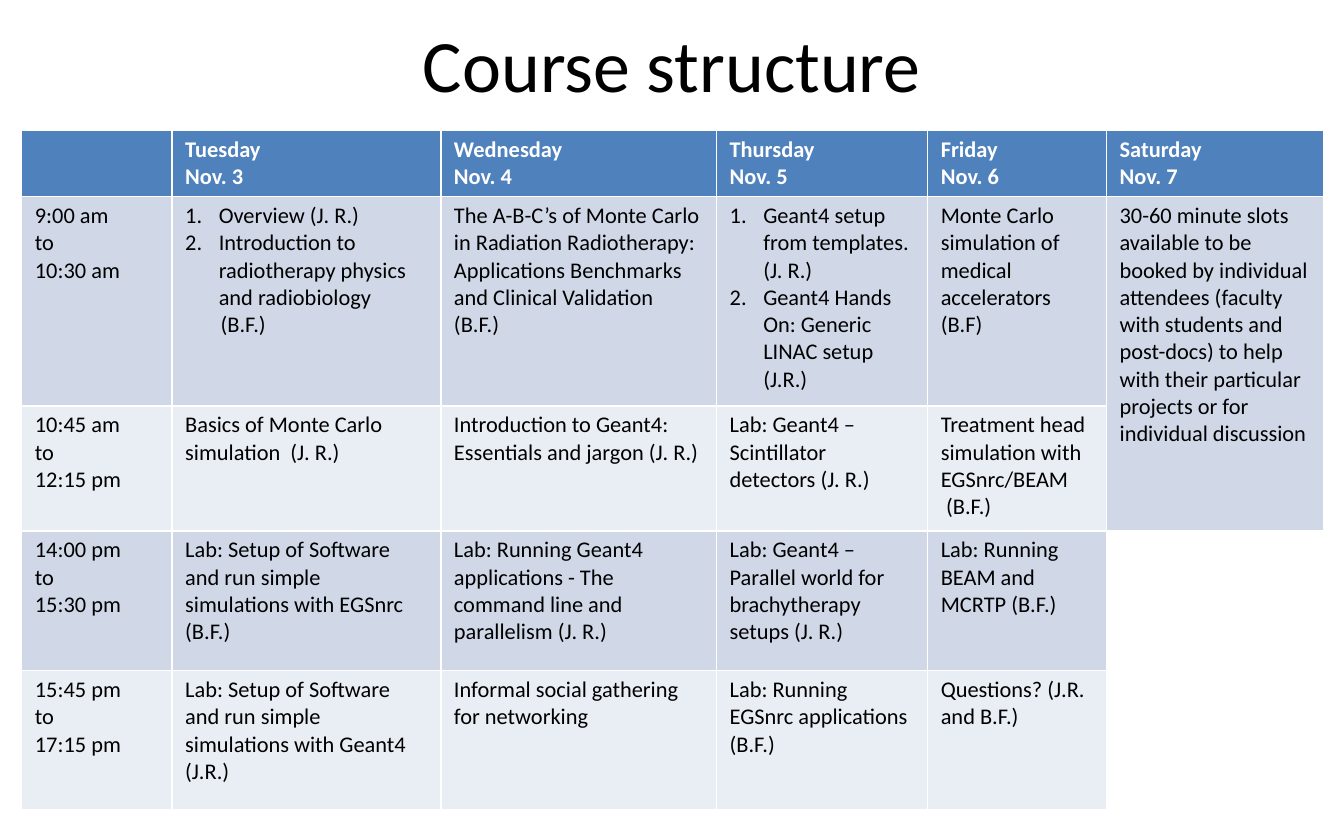
from dataclasses import dataclass, field
from typing import Any

from lxml.etree import SubElement
from pptx import Presentation
from pptx.dml.color import RGBColor
from pptx.enum.text import MSO_ANCHOR, PP_ALIGN
from pptx.oxml.ns import qn
from pptx.util import Cm, Pt


@dataclass(frozen=True)
class Theme:
    face: str = "Calibri"
    head: RGBColor = RGBColor(0x4F, 0x81, 0xBD)
    odd: RGBColor = RGBColor(0xD0, 0xD8, 0xE8)
    even: RGBColor = RGBColor(0xE9, 0xED, 0xF4)
    ink: RGBColor = RGBColor(0, 0, 0)
    pale: RGBColor = RGBColor(0xFF, 0xFF, 0xFF)
    title: Pt = Pt(39.6)
    body: Pt = Pt(12)


@dataclass(frozen=True)
class Line:
    text: str
    left: float = 0
    count: bool = False


@dataclass(frozen=True)
class Slot:
    start: str
    end: str
    talks: list[list[Line]] = field(default_factory=list)


THEME = Theme()
STEP = 0.635
WIDTHS = (2.84, 5.08, 5.21, 3.99, 3.38, 4.11)
HEIGHTS = (1.14, 3.96, 2.36, 2.64, 2.64)
DAYS = ("Tuesday", "Wednesday", "Thursday", "Friday", "Saturday")


def item(text: str) -> Line:
    return Line(text, STEP, True)


SLOTS = (
    Slot("9:00 am", "10:30 am", [
        [item("Overview (J. R.)"),
         item("Introduction to radiotherapy physics and radiobiology"),
         Line("(B.F.)", 0.67)],
        [Line("The A-B-C’s of Monte Carlo in Radiation Radiotherapy: "
              "Applications Benchmarks and Clinical Validation (B.F.)")],
        [item("Geant4 setup from templates. (J. R.)"),
         item("Geant4 Hands On: Generic LINAC setup (J.R.)")],
        [Line("Monte Carlo simulation of medical accelerators (B.F)")],
        [Line("30-60 minute slots available to be booked by individual "
              "attendees (faculty with students and post-docs) to help with "
              "their particular projects or for individual discussion")],
    ]),
    Slot("10:45 am", "12:15 pm", [
        [Line("Basics of Monte Carlo simulation  (J. R.)")],
        [Line("Introduction to Geant4: Essentials and jargon (J. R.)")],
        [Line("Lab: Geant4 – Scintillator detectors (J. R.)")],
        [Line("Treatment head simulation with EGSnrc/BEAM"),
         Line("(B.F.)", 0.1)],
    ]),
    Slot("14:00 pm", "15:30 pm", [
        [Line("Lab: Setup of Software and run simple simulations with EGSnrc (B.F.)")],
        [Line("Lab: Running Geant4 applications - The command line and parallelism (J. R.)")],
        [Line("Lab: Geant4 – Parallel world for brachytherapy setups (J. R.)")],
        [Line("Lab: Running BEAM and MCRTP (B.F.)")],
    ]),
    Slot("15:45 pm", "17:15 pm", [
        [Line("Lab: Setup of Software and run simple simulations with Geant4 (J.R.)")],
        [Line("Informal social gathering for networking")],
        [Line("Lab: Running EGSnrc applications (B.F.)")],
        [Line("Questions? (J.R. and B.F.)")],
    ]),
)


def apply(thing: Any, form: dict[str, Any]) -> None:
    for name, value in form.items():
        setattr(thing, name, value)


def write(frame: Any, lines: list[Line], ink: RGBColor, size: Pt, bold: bool = False) -> None:
    form = {"name": THEME.face, "size": size, "bold": bold}
    for rank, line in enumerate(lines):
        para = frame.add_paragraph() if rank else frame.paragraphs[0]
        props = para._p.get_or_add_pPr()
        if line.left:
            props.set("marL", str(Cm(line.left)))
        if line.count:
            props.set("indent", str(-Cm(STEP)))
            SubElement(props, qn("a:buFont"), typeface="+mj-lt")
            SubElement(props, qn("a:buAutoNum"), type="arabicPeriod")
        run = para.add_run()
        run.text = line.text
        apply(run.font, form)
        run.font.color.rgb = ink


def paint(cell: Any, color: RGBColor) -> None:
    cell.fill.solid()
    cell.fill.fore_color.rgb = color


def draw_head(grid: Any) -> None:
    paint(grid.cell(0, 0), THEME.head)
    for col, day in enumerate(DAYS, 1):
        cell = grid.cell(0, col)
        paint(cell, THEME.head)
        lines = [Line(day), Line(f"Nov. {col + 2}")]
        write(cell.text_frame, lines, THEME.pale, THEME.body, True)


def draw_slot(grid: Any, row: int, slot: Slot) -> None:
    color = THEME.odd if row % 2 else THEME.even
    hours = [Line(slot.start), Line("to"), Line(slot.end)]
    for col, lines in enumerate([hours, *slot.talks]):
        cell = grid.cell(row, col)
        paint(cell, color)
        write(cell.text_frame, lines, THEME.ink, THEME.body)


def draw_grid(slide: Any) -> None:
    grid = slide.shapes.add_table(
        len(HEIGHTS), len(WIDTHS), Cm(0.41), Cm(2.46), Cm(sum(WIDTHS)), Cm(sum(HEIGHTS))
    ).table
    for col, width in zip(grid.columns, WIDTHS):
        col.width = Cm(width)
    for row, height in zip(grid.rows, HEIGHTS):
        row.height = Cm(height)
    margin = {"margin_left": Cm(0.25), "margin_right": Cm(0.25),
              "margin_top": Cm(0.11), "margin_bottom": Cm(0.11)}
    for cell in grid.iter_cells():
        apply(cell, margin)
        cell.fill.background()
    grid.cell(1, 5).merge(grid.cell(2, 5))
    draw_head(grid)
    for row, slot in enumerate(SLOTS, 1):
        draw_slot(grid, row, slot)


def draw_title(slide: Any) -> None:
    title = slide.shapes.title
    apply(title, {"left": Cm(1.27), "top": Cm(0.28), "width": Cm(22.86), "height": Cm(1.83)})
    frame = title.text_frame
    frame.vertical_anchor = MSO_ANCHOR.MIDDLE
    write(frame, [Line("Course structure")], THEME.ink, THEME.title)
    frame.paragraphs[0].alignment = PP_ALIGN.CENTER


def main() -> None:
    deck = Presentation()
    apply(deck, {"slide_width": Cm(25.4), "slide_height": Cm(15.88)})
    slide = deck.slides.add_slide(deck.slide_layouts[5])
    draw_title(slide)
    draw_grid(slide)
    deck.save("out.pptx")


if __name__ == "__main__":
    main()
